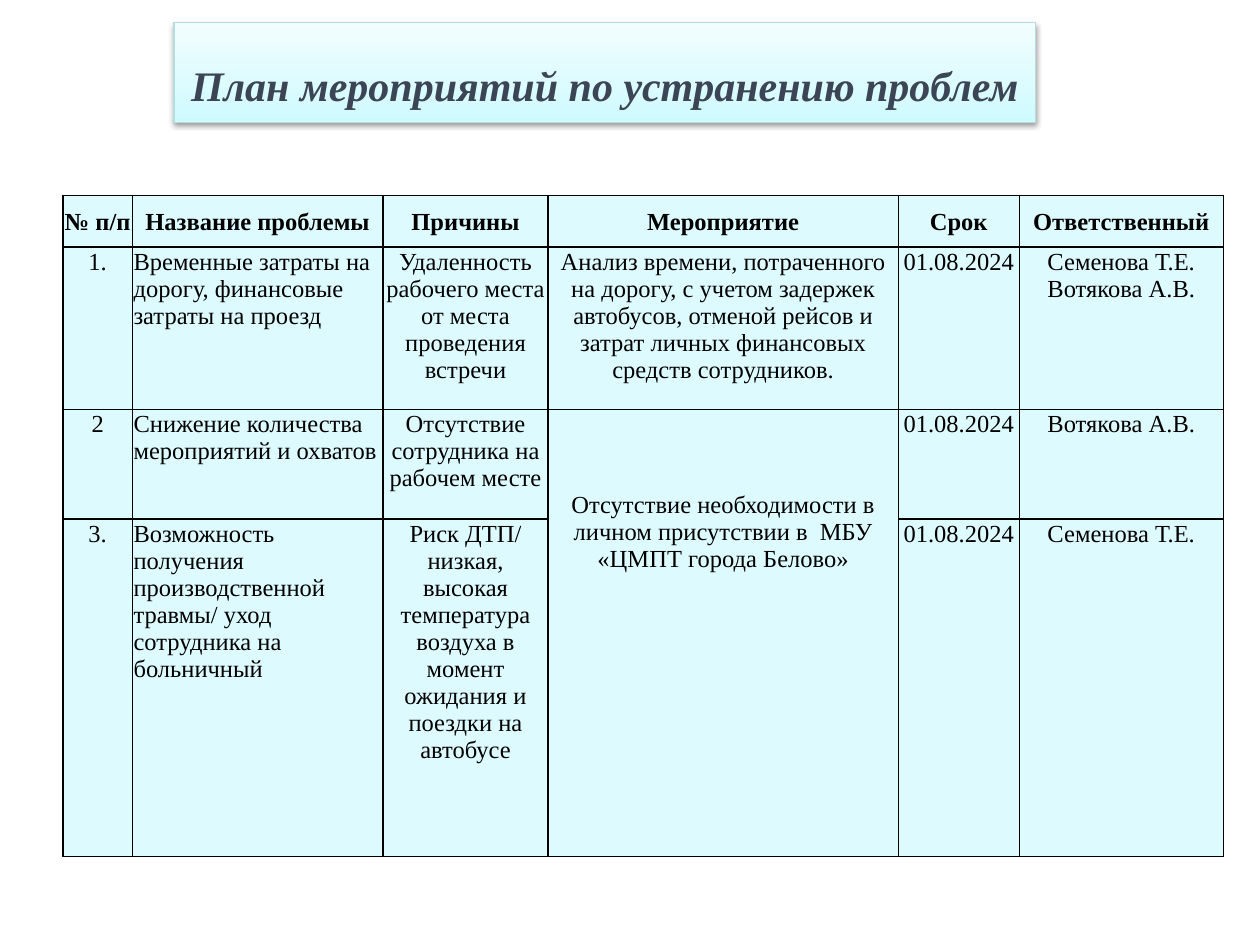
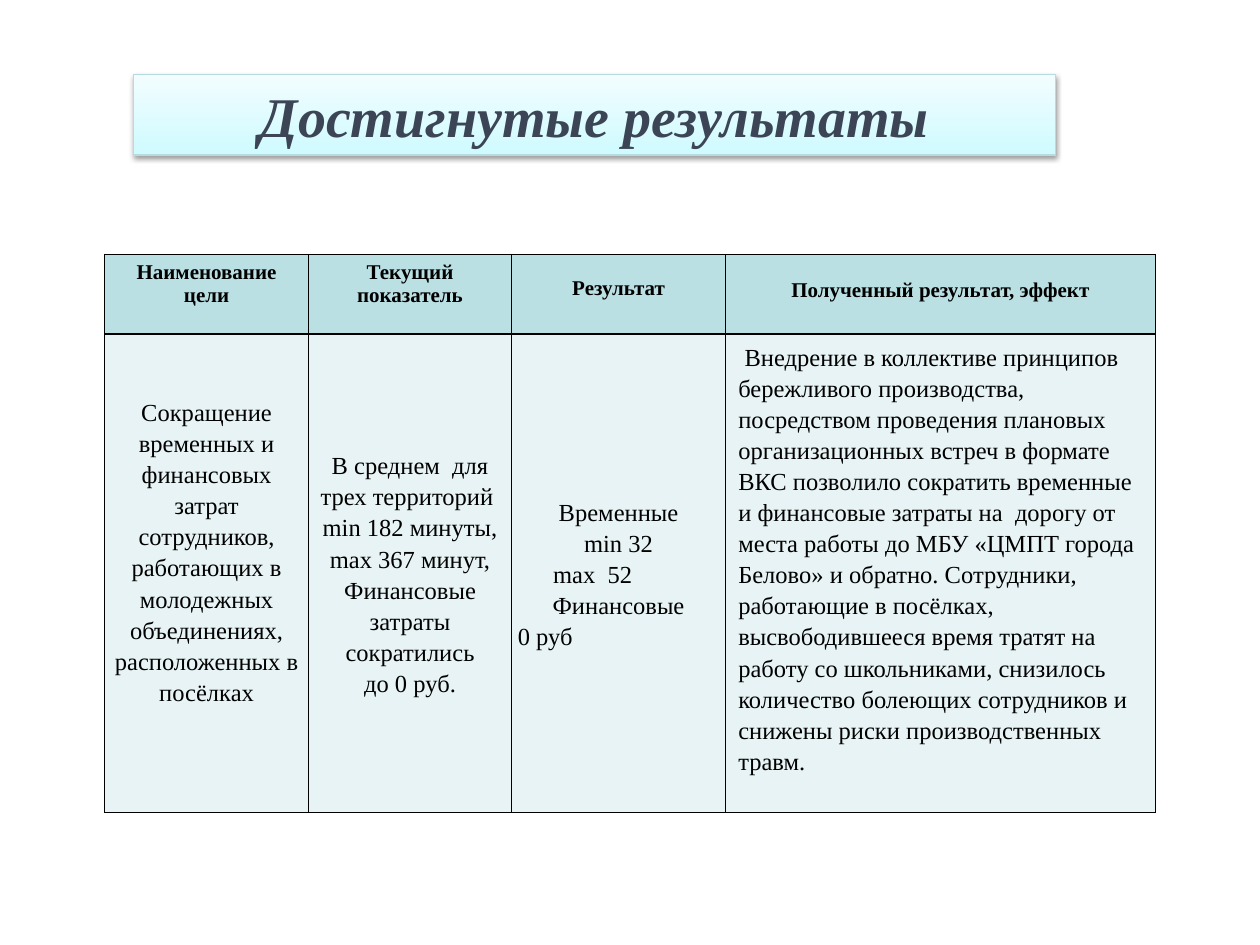
import pptx
import pptx.dml.color
import pptx.enum.text
import pptx.oxml
import pptx.oxml.ns
import pptx.util

RGBColor = pptx.dml.color.RGBColor
Inches = pptx.util.Inches
Pt = pptx.util.Pt
ALIGN = pptx.enum.text.PP_ALIGN
ANCHOR = pptx.enum.text.MSO_ANCHOR

# Shared style
FONT = "Times New Roman"
BLACK = RGBColor(0x00, 0x00, 0x00)
SLATE = RGBColor(0x3B, 0x45, 0x55)
BAND_TOP = RGBColor(0xF2, 0xFD, 0xFF)
BAND_BOTTOM = RGBColor(0xCF, 0xFB, 0xFF)
BAND_LINE = RGBColor(0xB6, 0xDC, 0xDF)
PLAN_FILL = RGBColor(0xDD, 0xFB, 0xFF)
HEAD_FILL = RGBColor(0xBB, 0xE0, 0xE3)
BODY_FILL = RGBColor(0xE7, 0xF3, 0xF4)
NS = 'xmlns:a="http://schemas.openxmlformats.org/drawingml/2006/main"'

# Content: a cell is its lines, or (lines, format) where it differs from its row
LEFT = {"align": ALIGN.LEFT}
DATE = "01.08.2024"
PLAN_ROWS = [
    ["№ п/п", "Название проблемы", "Причины", "Мероприятие", "Срок", "Ответственный"],
    ["1.",
     ("Временные затраты на дорогу, финансовые затраты на проезд", LEFT),
     "Удаленность рабочего места от места проведения встречи",
     "Анализ времени, потраченного на дорогу, с учетом задержек автобусов, "
     "отменой рейсов и затрат личных финансовых средств сотрудников.",
     DATE, ["Семенова Т.Е.", "Вотякова А.В."]],
    ["2",
     ("Снижение количества мероприятий и охватов", LEFT),
     "Отсутствие сотрудника на рабочем месте",
     ("Отсутствие необходимости в личном присутствии в  МБУ «ЦМПТ города Белово»",
      {"margins": (0.01, 0.65, 0.01, 0)}),
     DATE, "Вотякова А.В."],
    ["3.",
     ("Возможность получения производственной травмы/ уход сотрудника на больничный", LEFT),
     "Риск ДТП/ низкая, высокая температура воздуха в момент ожидания и поездки на автобусе",
     None, DATE, "Семенова Т.Е."],
]
RESULT_ROWS = [
    ["Наименование цели", "Текущий показатель",
     ("Результат", {"margins": (0.1, 0.18, 0.1, 0.05)}),
     ("Полученный результат, эффект", {"margins": (0.1, 0.19, 0.1, 0.05)})],
    [("Сокращение временных и финансовых затрат сотрудников, работающих в "
      "молодежных объединениях, расположенных в посёлках",
      {"anchor": ANCHOR.TOP, "margins": (0.05, 0.49, 0.05, 0)}),
     ["В среднем  для трех территорий  min 182 минуты,", "max 367 минут,",
      "Финансовые затраты сократились", "до 0 руб."],
     ["Временные", "min 32", ("max  52", {"align": ALIGN.LEFT, "left": 0.28}),
      "Финансовые", ("0 руб", LEFT)],
     ("Внедрение в коллективе принципов бережливого производства, посредством "
      "проведения плановых организационных встреч в формате ВКС позволило сократить "
      "временные и финансовые затраты на  дорогу от места работы до МБУ «ЦМПТ города "
      "Белово» и обратно. Сотрудники, работающие в посёлках, высвободившееся время "
      "тратят на работу со школьниками, снизилось количество болеющих сотрудников и "
      "снижены риски производственных травм.",
      {"align": ALIGN.LEFT, "first": 0.05, "anchor": ANCHOR.TOP,
       "margins": (0.1, 0.05, 0.1, 0.05)})],
]

TIGHT = {"margins": (0.01, 0.01, 0.01, 0), "size": 14, "fill": PLAN_FILL}
SLIDES = [
    {"title": "План мероприятий по устранению проблем",
     "band": (1.38, 0.18, 6.84, 0.79), "title_format": {"size": 24, "spacing": 1.5},
     "origin": (0.5, 1.55), "columns": (0.55, 1.99, 1.31, 2.78, 0.96, 1.62),
     "heights": (0.41, 1.29, 0.87, 2.68), "rows": PLAN_ROWS,
     "merge": ((2, 3), (3, 3)),
     "head": {**TIGHT, "bold": True, "anchor": ANCHOR.MIDDLE}, "body": TIGHT},
    {"title": "Достигнутые результаты",
     "band": (1.06, 0.59, 7.32, 0.64), "title_format": {"size": 32},
     "origin": (0.83, 2.02), "columns": (1.62, 1.61, 1.7, 3.41),
     "heights": (0.63, 3.8), "rows": RESULT_ROWS, "merge": None,
     "head": {"margins": (0.1, 0.05, 0.1, 0.05), "size": 12, "bold": True,
              "fill": HEAD_FILL},
     "body": {"margins": (0.05, 0, 0.05, 0), "size": 14, "spacing": 1.15,
              "fill": BODY_FILL, "anchor": ANCHOR.MIDDLE}},
]


def write(frame, lines, size, bold=False, italic=False, color=BLACK,
          align=ALIGN.CENTER, spacing=1.0, left=0, first=0):
    """Fill a text frame; a line may be (text, {align, left}) to differ."""
    for number, line in enumerate([lines] if isinstance(lines, str) else lines):
        text, own = (line, {}) if isinstance(line, str) else line
        paragraph = frame.add_paragraph() if number else frame.paragraphs[0]
        paragraph.alignment = own.get("align", align)
        paragraph.line_spacing = spacing
        paragraph.space_before = Pt(0)
        properties = paragraph._p.get_or_add_pPr()
        properties.set("marL", str(Inches(own.get("left", left))))
        properties.set("indent", str(Inches(first)))
        run = paragraph.add_run()
        run.text = text
        font = run.font
        font.name, font.size, font.bold, font.italic = FONT, Pt(size), bold, italic
        font.color.rgb = color


def add_title_band(slide, text, band, **text_format):
    title = slide.shapes.title
    title.left, title.top, title.width, title.height = map(Inches, band)
    title.fill.gradient()
    title.fill.gradient_angle = 270
    for stop, color in zip(title.fill.gradient_stops, (BAND_TOP, BAND_BOTTOM)):
        stop.color.rgb = color
    title.line.color.rgb = BAND_LINE
    title.line.width = Pt(0.75)
    title._element.spPr.append(pptx.oxml.parse_xml(
        f'<a:effectLst {NS}><a:outerShdw blurRad="{Pt(3.1)}" dist="{Pt(1.6)}" '
        'dir="5400000" rotWithShape="0"><a:srgbClr val="000000">'
        '<a:alpha val="38000"/></a:srgbClr></a:outerShdw></a:effectLst>'))
    frame = title.text_frame
    frame.auto_size = pptx.enum.text.MSO_AUTO_SIZE.NONE
    frame.word_wrap = False
    frame.vertical_anchor = ANCHOR.MIDDLE
    write(frame, text, bold=True, italic=True, color=SLATE, **text_format)


def format_cell(cell, fill, margins, anchor=ANCHOR.TOP):
    cell.margin_left, cell.margin_top, cell.margin_right, cell.margin_bottom = map(
        Inches, margins)
    cell.vertical_anchor = anchor
    cell.fill.solid()
    cell.fill.fore_color.rgb = fill
    # Borders come before the fill in the cell properties
    properties = cell._tc.get_or_add_tcPr()
    for place, side in enumerate("LRTB"):
        properties.insert(place, pptx.oxml.parse_xml(
            f'<a:ln{side} {NS} w="{Pt(1)}"><a:solidFill><a:srgbClr val="{BLACK}"/>'
            f'</a:solidFill></a:ln{side}>'))


def add_grid(slide, content):
    rows, columns, heights = content["rows"], content["columns"], content["heights"]
    left, top = content["origin"]
    table = slide.shapes.add_table(
        len(rows), len(columns), Inches(left), Inches(top),
        Inches(sum(columns)), Inches(sum(heights))).table
    table.first_row = table.horz_banding = False
    for column, width in zip(table.columns, columns):
        column.width = Inches(width)
    for row, height in zip(table.rows, heights):
        row.height = Inches(height)
    if content["merge"]:
        start, end = content["merge"]
        table.cell(*start).merge(table.cell(*end))
    for r, row in enumerate(rows):
        for c, entry in enumerate(row):
            lines, own = entry if isinstance(entry, tuple) else (entry, {})
            style = {**content["body" if r else "head"], **own}
            box = {key: style.pop(key) for key in ("fill", "margins", "anchor")
                   if key in style}
            cell = table.cell(r, c)
            format_cell(cell, **box)
            if lines:
                write(cell.text_frame, lines, **style)


def main():
    deck = pptx.Presentation()
    deck.slide_width, deck.slide_height = Inches(10), Inches(7.5)
    title_only = deck.slide_layouts[5]
    for content in SLIDES:
        slide = deck.slides.add_slide(title_only)
        add_title_band(slide, content["title"], content["band"],
                       **content["title_format"])
        add_grid(slide, content)
    deck.save("out.pptx")


if __name__ == "__main__":
    main()
